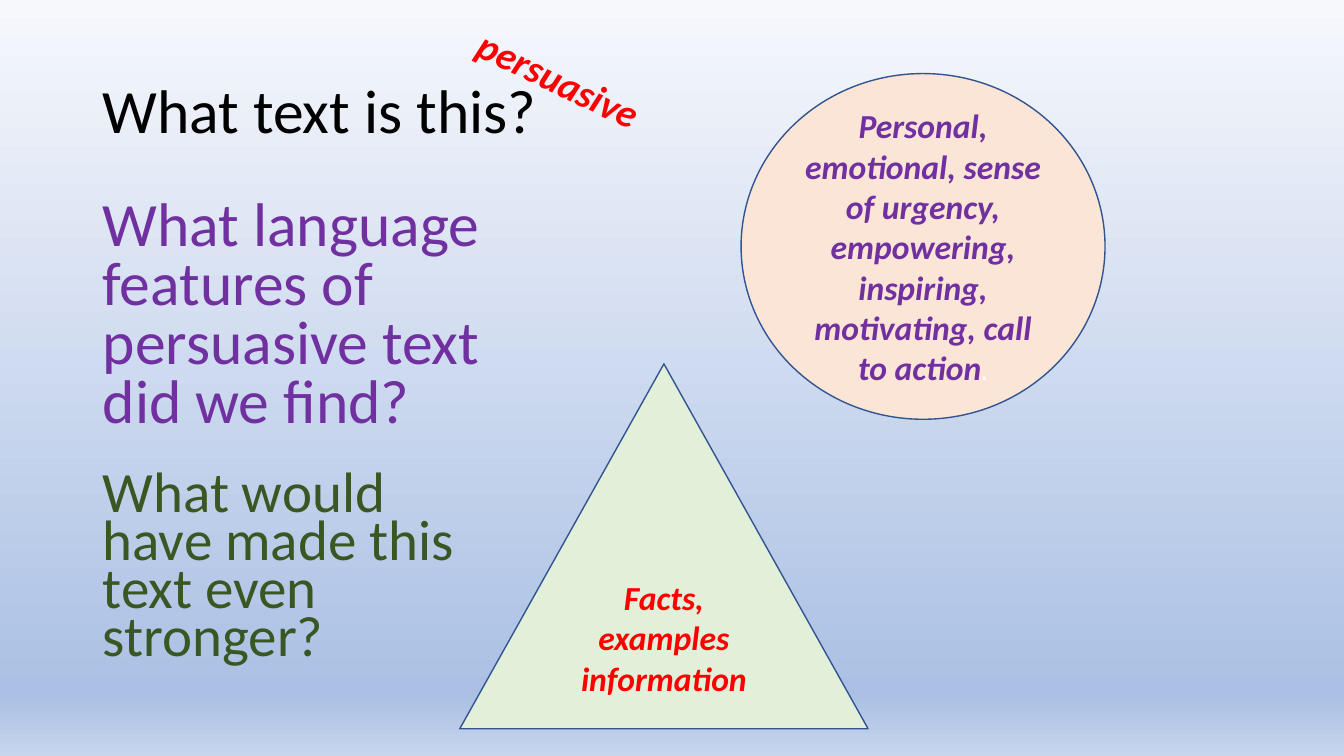
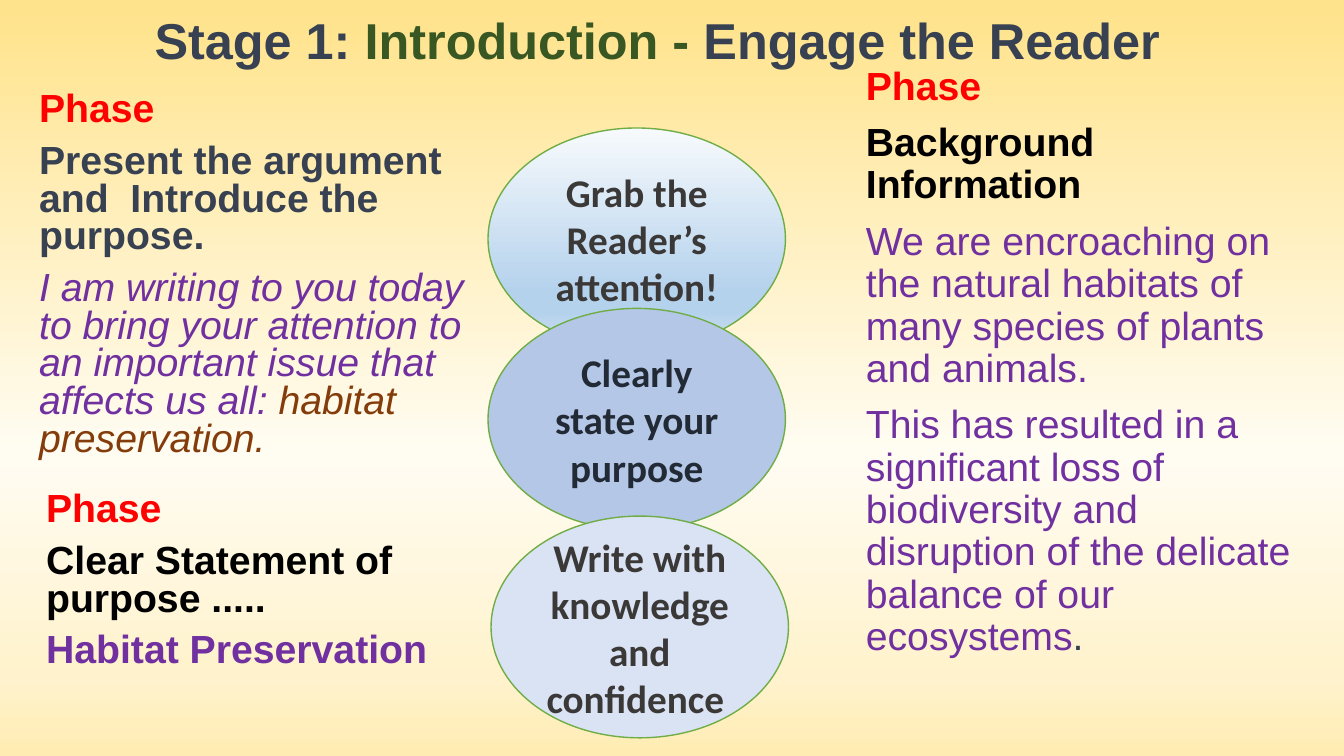
from lxml.etree import SubElement
from pptx import Presentation
from pptx.dml.color import RGBColor
from pptx.enum.shapes import MSO_SHAPE
from pptx.enum.text import MSO_ANCHOR, PP_ALIGN
from pptx.oxml.ns import qn
from pptx.util import Inches, Pt

BLACK = RGBColor(0x00, 0x00, 0x00)
WHITE = RGBColor(0xFF, 0xFF, 0xFF)
RED = RGBColor(0xFF, 0x00, 0x00)
PURPLE = RGBColor(0x70, 0x30, 0xA0)
GREEN = RGBColor(0x38, 0x57, 0x23)
SLATE = RGBColor(0x37, 0x41, 0x51)
BROWN = RGBColor(0x84, 0x3C, 0x0B)
CHARCOAL = RGBColor(0x3B, 0x38, 0x38)
NAVY = RGBColor(0x22, 0x2A, 0x35)
PEACH = RGBColor(0xFB, 0xE5, 0xD6)
MINT = RGBColor(0xE2, 0xF0, 0xD9)
BLUE = RGBColor(0xB4, 0xC7, 0xE7)
PALE_BLUE = RGBColor(0xDA, 0xE3, 0xF3)
BLUE_LINE = RGBColor(0x32, 0x54, 0x91)
GREEN_LINE = RGBColor(0x70, 0xAD, 0x47)

SKY = [(0, "F6F8FC"), (92, "ABC0E4"), (100, "C7D5ED")]
SAND = [(1, "FFE38C"), (60, "FFFCF2"), (90, "FFF2CC"), (100, "FFECB2")]
ICE = [(0, "F7FAFD"), (74, "B5D2EC"), (83, "B5D2EC"), (100, "CEE1F2")]


def set_gradient(owner, fill, stops):
    fill.gradient()
    fill.gradient_angle = 270
    gs_lst = owner.element.xpath(".//a:gsLst")[0]
    for gs in list(gs_lst):
        gs_lst.remove(gs)
    for pos, color in stops:
        gs = SubElement(gs_lst, qn("a:gs"), pos=str(pos * 1000))
        SubElement(gs, qn("a:srgbClr"), val=color)


def write(sp, paragraphs, size, font="Calibri", spacing=1.0, before=0,
          align=PP_ALIGN.LEFT, anchor=MSO_ANCHOR.MIDDLE):
    tf = sp.text_frame
    tf.word_wrap = True
    tf.vertical_anchor = anchor
    for i, (bold, italic, runs) in enumerate(paragraphs):
        p = tf.add_paragraph() if i else tf.paragraphs[0]
        p.alignment = align
        p.line_spacing = spacing
        p.space_before = Pt(before)
        p.font.name, p.font.size = font, Pt(size)
        p.font.bold, p.font.italic = bold, italic
        for text, color in runs:
            r = p.add_run()
            r.text = text
            r.font.color.rgb = color


prs = Presentation()
prs.slide_width, prs.slide_height = Inches(13.33), Inches(7.5)
blank = prs.slide_layouts[6]

s = prs.slides.add_slide(blank)
set_gradient(s, s.background.fill, SKY)

questions = [
    (0.4, 4.83, 1.45, 44, 0.9, BLACK, "What text is this?"),
    (1.85, 4.22, 2.6, 44, 0.8, PURPLE, "What language features of persuasive text did we find?"),
    (4.52, 4.05, 2.27, 40.7, 0.7, GREEN, "What would have made this text even stronger?"),
]
for top, width, height, size, spacing, color, text in questions:
    sp = s.shapes.add_textbox(Inches(0.92), Inches(top), Inches(width), Inches(height))
    write(sp, [(False, False, [(text, color)])], size, spacing=spacing)

sp = s.shapes.add_textbox(Inches(4.55), Inches(0.66), Inches(2.66), Inches(0.57))
sp.rotation = 25.7
write(sp, [(True, True, [("persuasive", RED)])], 28, anchor=MSO_ANCHOR.TOP)

answers = [
    (MSO_SHAPE.OVAL, 7.35, 0.73, 3.61, 3.43, PEACH,
     [("Personal, emotional, sense of urgency, empowering, inspiring, motivating, call to action", PURPLE),
      (".", WHITE)]),
    (MSO_SHAPE.ISOSCELES_TRIANGLE, 4.56, 3.61, 4.05, 3.62, MINT,
     [("Facts, examples information", RED)]),
]
for kind, left, top, width, height, color, runs in answers:
    sp = s.shapes.add_shape(kind, Inches(left), Inches(top), Inches(width), Inches(height))
    sp.shadow.inherit = False
    sp.fill.solid()
    sp.fill.fore_color.rgb = color
    sp.line.color.rgb, sp.line.width = BLUE_LINE, Pt(1)
    write(sp, [(True, True, runs)], 24, align=PP_ALIGN.CENTER)
    for r in sp.text_frame.paragraphs[0].runs[1:]:
        r.font.size = Pt(18)

s = prs.slides.add_slide(blank)
set_gradient(s, s.background.fill, SAND)

sp = s.shapes.add_textbox(Inches(1.37), Inches(0.13), Inches(10.3), Inches(0.6))
title = [("Stage 1: ", SLATE), ("Introduction - ", GREEN), ("Engage the Reader", SLATE)]
write(sp, [(True, False, title)], 36, "Arial", 0.9, align=PP_ALIGN.CENTER)

phases = [
    (0.29, 0.87, 4.36, 0.8, [
        (True, False, [("Present the argument and  Introduce the purpose.", SLATE)]),
        (False, True, [("I am writing to you today to bring your attention to an important issue that affects us all: ", PURPLE),
                       ("habitat preservation.", BROWN)]),
    ]),
    (8.49, 0.61, 6.44, 0.9, [
        (True, False, [("Background Information", BLACK)]),
        (False, False, [("We are encroaching on the natural habitats of many species of plants and animals.", PURPLE)]),
        (False, False, [("This has resulted in a significant loss of biodiversity and disruption of the delicate balance of our ecosystems", PURPLE),
                        (".", SLATE)]),
    ]),
    (0.36, 4.84, 1.95, 0.8, [
        (True, False, [("Clear Statement of purpose .....", BLACK)]),
        (True, False, [("Habitat Preservation", PURPLE)]),
    ]),
]
for left, top, height, spacing, paragraphs in phases:
    sp = s.shapes.add_textbox(Inches(left), Inches(top), Inches(4.43), Inches(height))
    heading = (True, False, [("Phase", RED)])
    write(sp, [heading] + paragraphs, 28, "Arial", spacing, 10, anchor=MSO_ANCHOR.TOP)

tips = [
    (4.84, 1.27, None, CHARCOAL, "Grab the Reader’s attention!"),
    (4.84, 3.06, BLUE, NAVY, "Clearly state your purpose"),
    (4.87, 5.12, PALE_BLUE, CHARCOAL, "Write with knowledge and confidence "),
]
for left, top, fill, color, text in tips:
    sp = s.shapes.add_shape(MSO_SHAPE.OVAL, Inches(left), Inches(top), Inches(2.95), Inches(2.2))
    sp.shadow.inherit = False
    if fill is None:
        set_gradient(sp, sp.fill, ICE)
    else:
        sp.fill.solid()
        sp.fill.fore_color.rgb = fill
    sp.line.color.rgb, sp.line.width = GREEN_LINE, Pt(1)
    write(sp, [(True, False, [(text, color)])], 28, align=PP_ALIGN.CENTER)

prs.save("out.pptx")
